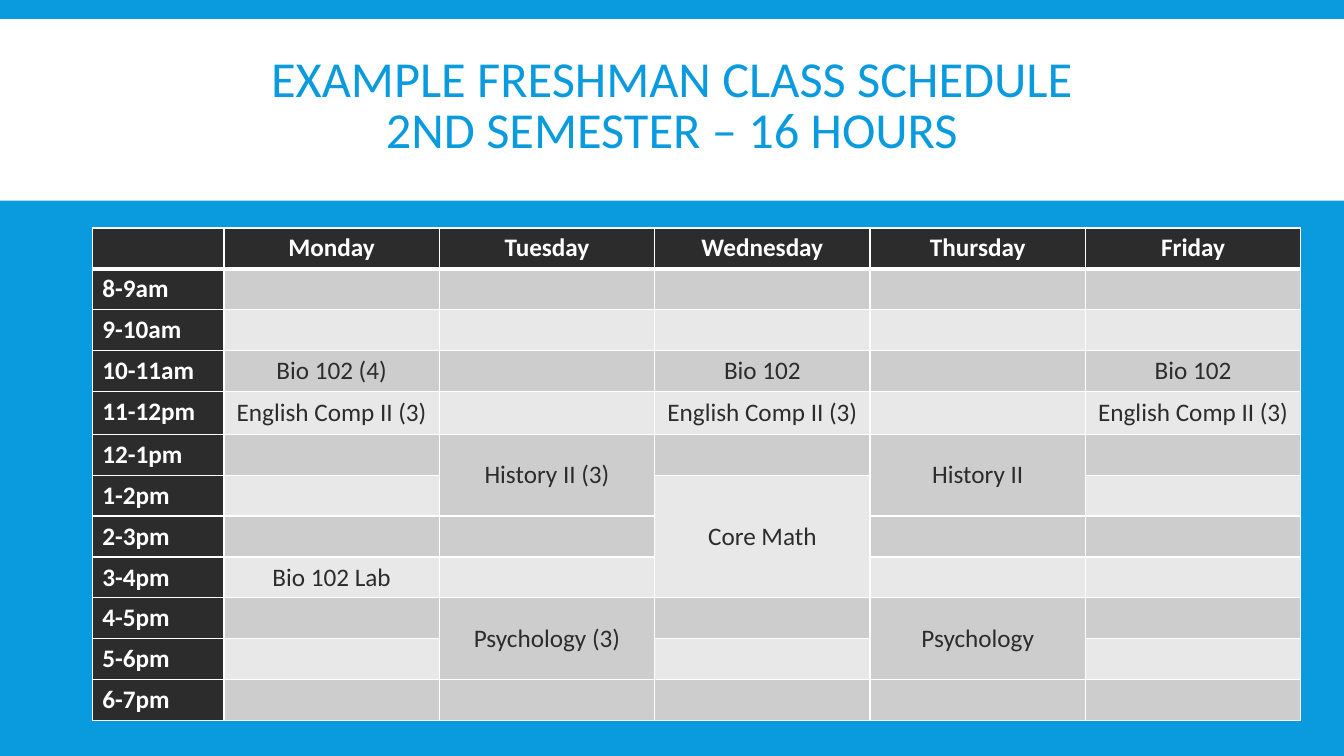
"""Build a slide with a freshman class schedule for the second semester."""
from lxml.etree import SubElement
from pptx import Presentation
from pptx.dml.color import RGBColor
from pptx.enum.shapes import MSO_SHAPE
from pptx.enum.text import MSO_ANCHOR, PP_ALIGN
from pptx.oxml.ns import qn
from pptx.util import Pt

TITLE = ["EXAMPLE FRESHMAN CLASS SCHEDULE", "2ND SEMESTER – 16 HOURS"]
DAYS = ["Monday", "Tuesday", "Wednesday", "Thursday", "Friday"]
HOURS = ["8-9am", "9-10am", "10-11am", "11-12pm", "12-1pm", "1-2pm",
         "2-3pm", "3-4pm", "4-5pm", "5-6pm", "6-7pm"]
CLASSES = [
    ("Monday", "10-11am", 1, "Bio 102 (4)"),
    ("Wednesday", "10-11am", 1, "Bio 102"),
    ("Friday", "10-11am", 1, "Bio 102"),
    ("Monday", "11-12pm", 1, "English Comp II (3)"),
    ("Wednesday", "11-12pm", 1, "English Comp II (3)"),
    ("Friday", "11-12pm", 1, "English Comp II (3)"),
    ("Tuesday", "12-1pm", 2, "History II (3)"),
    ("Thursday", "12-1pm", 2, "History II"),
    ("Wednesday", "1-2pm", 3, "Core Math"),
    ("Monday", "3-4pm", 1, "Bio 102 Lab"),
    ("Tuesday", "4-5pm", 2, "Psychology (3)"),
    ("Thursday", "4-5pm", 2, "Psychology"),
]

FONT = "Calibri"
BLUE = RGBColor(0x09, 0x9B, 0xDD)
WHITE = RGBColor(0xFF, 0xFF, 0xFF)
DARK = RGBColor(0x2C, 0x2C, 0x2C)
BANDS = [RGBColor(0xCD, 0xCD, 0xCD), RGBColor(0xE8, 0xE8, 0xE8)]
SLIDE_W, SLIDE_H = 960, 540
HOUR_W, DAY_W = 94, 153.85
ROW_H, TALL_ROW_H = 29.25, 30.5


def add_run(p, text, size, color, bold=False):
    r = p.add_run()
    r.text = text
    r.font.name = FONT
    r.font.size = Pt(size)
    r.font.bold = bold
    r.font.color.rgb = color


def add_borders(cell, bottom):
    tc_pr = cell._tc.get_or_add_tcPr()
    for side, width in (("L", 1), ("R", 1), ("T", 1), ("B", bottom)):
        ln = SubElement(tc_pr, qn(f"a:ln{side}"), w=str(Pt(width)))
        SubElement(SubElement(ln, qn("a:solidFill")), qn("a:srgbClr"), val=str(WHITE))


def write_cell(cell, text, color, bold, align):
    p = cell.text_frame.paragraphs[0]
    p.alignment = align
    add_run(p, text, 18, color, bold)


def add_title(s):
    band = s.shapes.add_shape(MSO_SHAPE.RECTANGLE, 0, Pt(13.7), Pt(SLIDE_W), Pt(129.6))
    band.shadow.inherit = False
    band.fill.solid()
    band.fill.fore_color.rgb = WHITE
    band.line.fill.background()
    tf = s.shapes.add_textbox(Pt(66), Pt(28.8), Pt(828), Pt(96.5)).text_frame
    tf.word_wrap = True
    tf.vertical_anchor = MSO_ANCHOR.MIDDLE
    p = tf.paragraphs[0]
    p.alignment = PP_ALIGN.CENTER
    p.line_spacing = 0.85
    add_run(p, TITLE[0], 36, BLUE)
    p.add_line_break()
    add_run(p, TITLE[1], 36, BLUE)


def add_schedule(s):
    heights = [ROW_H] + [TALL_ROW_H if h == "11-12pm" else ROW_H for h in HOURS]
    table = s.shapes.add_table(
        len(heights), len(DAYS) + 1, Pt(66), Pt(162.8),
        Pt(HOUR_W + DAY_W * len(DAYS)), Pt(sum(heights))).table
    for i, column in enumerate(table.columns):
        column.width = Pt(DAY_W if i else HOUR_W)
    for i, height in enumerate(heights):
        table.rows[i].height = Pt(height)
        for j in range(len(DAYS) + 1):
            cell = table.cell(i, j)
            add_borders(cell, 1 if i else 3)
            cell.fill.solid()
            cell.fill.fore_color.rgb = BANDS[(i - 1) % 2] if i and j else DARK
    for j, day in enumerate(DAYS, 1):
        write_cell(table.cell(0, j), day, WHITE, True, PP_ALIGN.CENTER)
    for i, hour in enumerate(HOURS, 1):
        write_cell(table.cell(i, 0), hour, WHITE, True, PP_ALIGN.LEFT)
    for day, hour, length, name in CLASSES:
        i, j = HOURS.index(hour) + 1, DAYS.index(day) + 1
        cell = table.cell(i, j)
        if length > 1:
            cell.merge(table.cell(i + length - 1, j))
        cell.vertical_anchor = MSO_ANCHOR.MIDDLE
        write_cell(cell, name, DARK, False, PP_ALIGN.CENTER)


def main():
    prs = Presentation()
    prs.slide_width, prs.slide_height = Pt(SLIDE_W), Pt(SLIDE_H)
    s = prs.slides.add_slide(prs.slide_layouts[6])
    s.background.fill.solid()
    s.background.fill.fore_color.rgb = BLUE
    add_title(s)
    add_schedule(s)
    prs.save("out.pptx")


if __name__ == "__main__":
    main()
